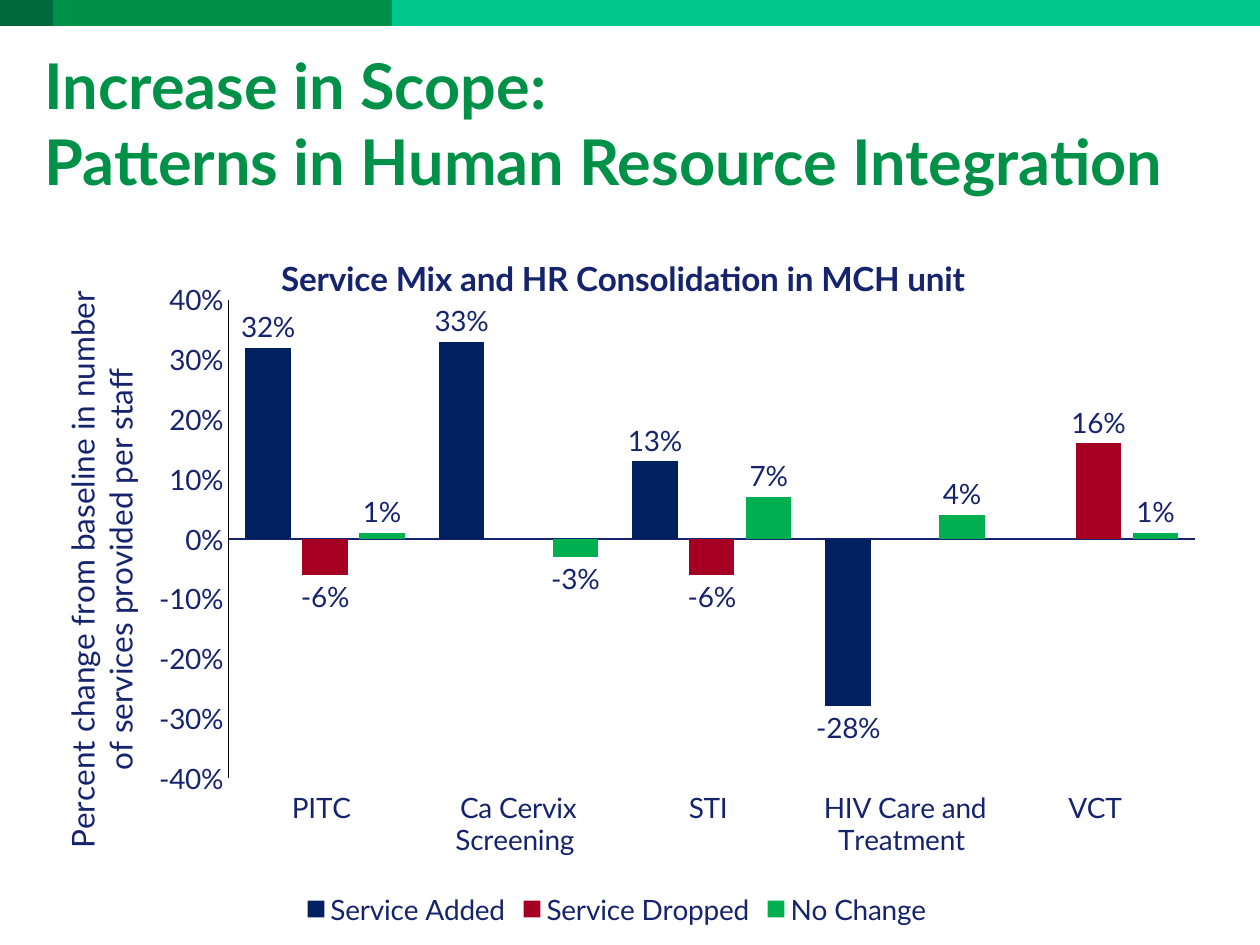
import pptx
import pptx.chart.data
import pptx.dml.color
import pptx.enum.chart
import pptx.enum.shapes
import pptx.enum.text
import pptx.oxml
import pptx.oxml.ns
import pptx.util

PX = 914400 / 126
FONT = "Lato"
RGBColor = pptx.dml.color.RGBColor
DARK_GREEN = RGBColor(0x00, 0x69, 0x3C)
GREEN = RGBColor(0x00, 0x91, 0x48)
MINT = RGBColor(0x00, 0xC7, 0x8B)
INDIGO = RGBColor(0x16, 0x24, 0x6D)
NAVY = RGBColor(0x00, 0x20, 0x60)
CRIMSON = RGBColor(0xA5, 0x00, 0x21)
LEAF = RGBColor(0x00, 0xB0, 0x50)
BLACK = RGBColor(0x00, 0x00, 0x00)

CATEGORIES = ["PITC ", "Ca Cervix Screening ", "STI ", "HIV Care and Treatment ", "VCT "]
SERIES = [
    ("Service Added", NAVY, [0.32, 0.33, 0.13, -0.28, None]),
    ("Service Dropped", CRIMSON, [-0.06, None, -0.06, None, 0.16]),
    ("No Change", LEAF, [0.01, -0.03, 0.07, 0.04, 0.01]),
]


def emu(*lengths):
    return [pptx.util.Emu(round(length * PX)) for length in lengths]


def style_font(font, size, color, bold=False):
    font.name, font.size, font.bold = FONT, pptx.util.Pt(size), bold
    font.color.rgb = color


def set_layout(element, **settings):
    """Place a chart part by fractions of the chart area."""
    qn = pptx.oxml.ns.qn
    layout = pptx.oxml.parse_xml(
        "<c:layout %s><c:manualLayout/></c:layout>" % pptx.oxml.ns.nsdecls("c"))
    for name, value in settings.items():
        layout[0].append(layout.makeelement(qn("c:" + name), {"val": str(value)}))
    old = element.find(qn("c:layout"))
    if old is not None:
        element.remove(old)
    overlay = element.find(qn("c:overlay"))
    if overlay is not None:
        overlay.addprevious(layout)
    else:
        element.insert(0, layout)


def add_top_band(slide, left, top, width, height):
    edges = [0, 53, 392, width]
    for start, end, color in zip(edges, edges[1:], (DARK_GREEN, GREEN, MINT)):
        shape = slide.shapes.add_shape(
            pptx.enum.shapes.MSO_SHAPE.RECTANGLE,
            *emu(left + start, top, end - start, height))
        shape.shadow.inherit = False
        shape.fill.solid()
        shape.fill.fore_color.rgb = color
        shape.line.fill.background()


def fill_title(slide, left, top, width, height):
    title = slide.shapes.title
    title.left, title.top, title.width, title.height = emu(left, top, width, height)
    frame = title.text_frame
    frame.word_wrap = True
    frame.auto_size = pptx.enum.text.MSO_AUTO_SIZE.NONE
    frame.vertical_anchor = pptx.enum.text.MSO_ANCHOR.MIDDLE
    frame.text = "Increase in Scope:\vPatterns in Human Resource Integration"
    paragraph = frame.paragraphs[0]
    paragraph.alignment = pptx.enum.text.PP_ALIGN.LEFT
    for run in paragraph.runs:
        style_font(run.font, 36, GREEN, True)


def set_chart_text(title, text, size, bold):
    title.text_frame.text = text
    style_font(title.text_frame.paragraphs[0].runs[0].font, size, INDIGO, bold)


def style_axis(axis, line_color):
    axis.has_major_gridlines = False
    axis.major_tick_mark = axis.minor_tick_mark = pptx.enum.chart.XL_TICK_MARK.NONE
    axis.format.line.color.rgb = line_color
    axis.format.line.width = pptx.util.Pt(0.75)
    style_font(axis.tick_labels.font, 16, INDIGO)


def add_staffing_chart(slide, left, top, width, height):
    data = pptx.chart.data.CategoryChartData(number_format="0%")
    data.categories = CATEGORIES
    for name, _, values in SERIES:
        data.add_series(name, values)
    chart = slide.shapes.add_chart(
        pptx.enum.chart.XL_CHART_TYPE.COLUMN_CLUSTERED,
        *emu(left, top, width, height), data).chart
    style_font(chart.font, 16, INDIGO)

    # Chart title
    chart.has_title = True
    set_chart_text(chart.chart_title, "Service Mix and HR Consolidation in MCH unit", 19, True)

    # Axes
    style_axis(chart.category_axis, INDIGO)
    chart.category_axis.tick_label_position = pptx.enum.chart.XL_TICK_LABEL_POSITION.LOW
    value_axis = chart.value_axis
    style_axis(value_axis, BLACK)
    value_axis.minimum_scale, value_axis.maximum_scale = -0.4, 0.4
    value_axis.major_unit = 0.1
    value_axis.tick_labels.number_format = "0%"
    value_axis.tick_labels.number_format_is_linked = False
    value_axis.has_title = True
    set_chart_text(value_axis.axis_title,
                   "Percent change from baseline in number of services provided per staff",
                   18, False)

    # Columns and their labels
    plot = chart.plots[0]
    plot.gap_width, plot.overlap, plot.vary_by_categories = 75, -25, False
    for series, (_, color, _) in zip(plot.series, SERIES):
        series.invert_if_negative = False
        series.format.fill.solid()
        series.format.fill.fore_color.rgb = color
        labels = series.data_labels
        labels.show_value = True
        labels.number_format, labels.number_format_is_linked = "0%", False
        labels.position = pptx.enum.chart.XL_LABEL_POSITION.OUTSIDE_END
        style_font(labels.font, 16, INDIGO)

    # Legend
    chart.has_legend = True
    chart.legend.position = pptx.enum.chart.XL_LEGEND_POSITION.BOTTOM
    chart.legend.include_in_layout = False
    style_font(chart.legend.font, 16, INDIGO)

    # Places of the plot area, the titles and the legend
    for route, placement in (
            ("c:plotArea", {"x": 0.16, "y": 0.11, "w": 0.83, "h": 0.66}),
            ("c:title", {"x": 0.2, "y": 0.04}),
            ("c:plotArea/c:valAx/c:title", {"x": 0.01, "y": 0.09}),
            ("c:legend", {"x": 0.22, "y": 0.92})):
        element = chart.element.xpath("c:chart/" + route)[0]
        target = {"layoutTarget": "inner"} if "w" in placement else {}
        set_layout(element, **target, xMode="edge", yMode="edge", **placement)


def main():
    presentation = pptx.Presentation()
    presentation.slide_width, presentation.slide_height = emu(1260, 945)
    slide = presentation.slides.add_slide(presentation.slide_layouts[5])
    add_top_band(slide, 0, 0, 1260, 26)
    fill_title(slide, 32, 35, 1260, 175)
    add_staffing_chart(slide, 42, 220, 1165, 725)
    presentation.save("out.pptx")


if __name__ == "__main__":
    main()
